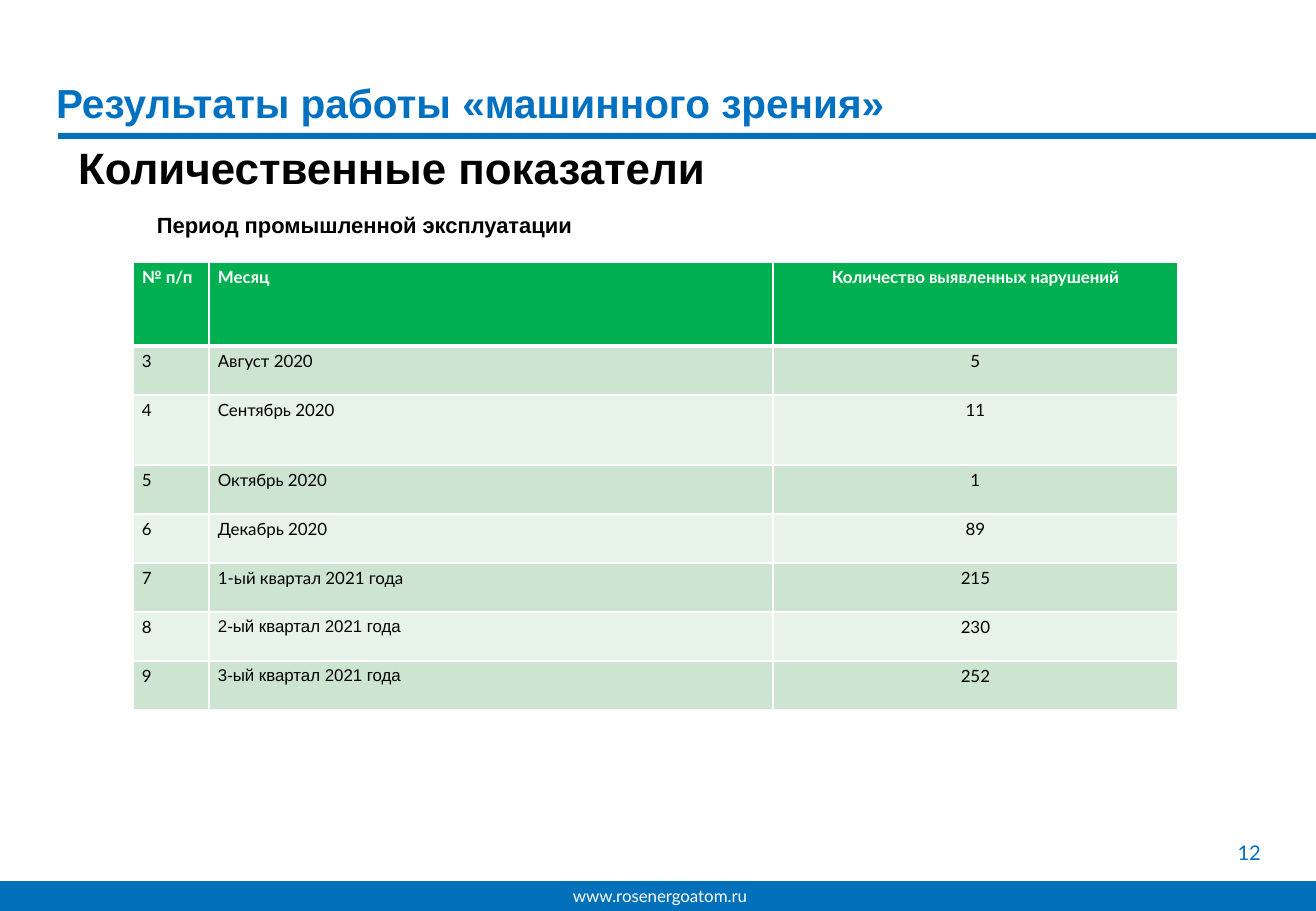
import pptx
import pptx.dml.color
import pptx.enum.shapes
import pptx.enum.text
import pptx.oxml
import pptx.oxml.ns
import pptx.util

ALIGN = pptx.enum.text.PP_ALIGN
ANCHOR = pptx.enum.text.MSO_ANCHOR
BLUE, TITLE_BLUE, WHITE, BLACK = "0070BA", "0070C0", "FFFFFF", "000000"
GREEN, BANDS = "00B050", ("CCE4D0", "E7F2E9")
EMU_PER_PX = 7526


def px(length):
    return pptx.util.Emu(length * EMU_PER_PX)


def color(value):
    return pptx.dml.color.RGBColor.from_string(value)


def set_all(target, values):
    for name, value in values.items():
        setattr(target, name, value)


class SlideBuilder:
    def __init__(self, presentation):
        self.slide = presentation.slides.add_slide(presentation.slide_layouts[5])

    def style_text(self, paragraph, text, size, hex_color, font="Lato", bold=False, **layout):
        paragraph.text = text
        set_all(paragraph, layout)
        set_all(paragraph.font, {"name": font, "size": pptx.util.Pt(size), "bold": bold})
        paragraph.font.color.rgb = color(hex_color)

    def fill_frame(self, frame, margins, anchor, text, size, hex_color, **style):
        horizontal, vertical = map(px, margins)
        set_all(frame, {
            "word_wrap": True, "auto_size": pptx.enum.text.MSO_AUTO_SIZE.NONE,
            "vertical_anchor": anchor, "margin_left": horizontal, "margin_right": horizontal,
            "margin_top": vertical, "margin_bottom": vertical})
        self.style_text(frame.paragraphs[0], text, size, hex_color, **style)

    def title(self, box, text, size, hex_color, **style):
        shape = self.slide.shapes.title
        set_all(shape, dict(zip(("left", "top", "width", "height"), map(px, box))))
        self.fill_frame(shape.text_frame, (9, 5), ANCHOR.MIDDLE, text, size, hex_color, **style)

    def text(self, box, text, size, hex_color, margins=(12, 6), anchor=ANCHOR.TOP, **style):
        shape = self.slide.shapes.add_textbox(*map(px, box))
        self.fill_frame(shape.text_frame, margins, anchor, text, size, hex_color, **style)

    def bar(self, box, hex_color):
        shape = self.slide.shapes.add_shape(
            pptx.enum.shapes.MSO_SHAPE.RECTANGLE, *map(px, box))
        shape.shadow.inherit = False
        shape.fill.solid()
        shape.fill.fore_color.rgb = color(hex_color)
        shape.line.fill.background()

    def cell_borders(self, cell, hex_color, widths):
        properties = cell._tc.get_or_add_tcPr()
        for index, (side, width) in enumerate(widths.items()):
            properties.insert(index, pptx.oxml.parse_xml(
                f'<a:{side} {pptx.oxml.ns.nsdecls("a")} w="{pptx.util.Pt(width)}">'
                f'<a:solidFill><a:srgbClr val="{hex_color}"/></a:solidFill></a:{side}>'))

    def table(self, left, top, widths, heights, rows, fonts):
        table = self.slide.shapes.add_table(
            len(rows), len(widths), px(left), px(top), px(sum(widths)), px(sum(heights))).table
        for column, width in zip(table.columns, widths):
            column.width = px(width)
        for row_index, (row, height) in enumerate(zip(rows, heights)):
            table.rows[row_index].height = px(height)
            header = row_index == 0
            for column_index, text in enumerate(row):
                cell = table.cell(row_index, column_index)
                set_all(cell, {"margin_left": px(9), "margin_right": px(9),
                               "margin_top": px(5), "margin_bottom": px(5)})
                cell.fill.solid()
                cell.fill.fore_color.rgb = color(GREEN if header else BANDS[(row_index - 1) % 2])
                self.cell_borders(cell, WHITE, {
                    "lnL": 1, "lnR": 1, "lnT": 3 if row_index == 1 else 1,
                    "lnB": 3 if header else 1})
                self.style_text(
                    cell.text_frame.paragraphs[0], text, 10, WHITE if header else BLACK,
                    font=fonts.get((row_index, column_index), "Lato"), bold=header,
                    alignment=ALIGN.CENTER if column_index == 2 else ALIGN.LEFT)


def main():
    presentation = pptx.Presentation()
    set_all(presentation, {"slide_width": px(1316), "slide_height": px(911)})
    builder = SlideBuilder(presentation)

    # Title rule, footer and page number
    builder.bar((58, 133, 1258, 6), BLUE)
    builder.bar((0, 881, 1316, 30), BLUE)
    builder.text((550, 880, 220, 33), "www.rosenergoatom.ru", 10, WHITE, alignment=ALIGN.CENTER)
    builder.text((1081, 824, 204, 56), "12", 12, TITLE_BLUE, margins=(24, 12),
                 anchor=ANCHOR.MIDDLE, alignment=ALIGN.RIGHT)

    # Headings
    heading = {"font": "Arial", "bold": True, "line_spacing": 0.9, "alignment": ALIGN.LEFT}
    builder.title((47, 55, 1242, 100), "Результаты работы «машинного зрения»",
                  24, TITLE_BLUE, **heading)
    builder.text((78, 147, 944, 47), "Количественные показатели", 26, BLACK,
                 margins=(0, 0), **heading)
    builder.text((145, 209, 536, 36), "Период промышленной эксплуатации", 13, BLACK, **heading)

    # Violations by period
    rows = [
        ("№ п/п", "Месяц", "Количество выявленных нарушений"),
        ("3", "Август 2020", "5"),
        ("4", "Сентябрь 2020", "11"),
        ("5", "Октябрь 2020", "1"),
        ("6", "Декабрь 2020", "89"),
        ("7", "1-ый квартал 2021 года", "215"),
        ("8", "2-ый квартал 2021 года", "230"),
        ("9", "3-ый квартал 2021 года", "252"),
    ]
    builder.table(133, 262, (76, 564, 405), [84, 49, 70] + [49] * 5, rows,
                  fonts={(6, 1): "Arial", (7, 1): "Arial"})

    presentation.save("out.pptx")


if __name__ == "__main__":
    main()
